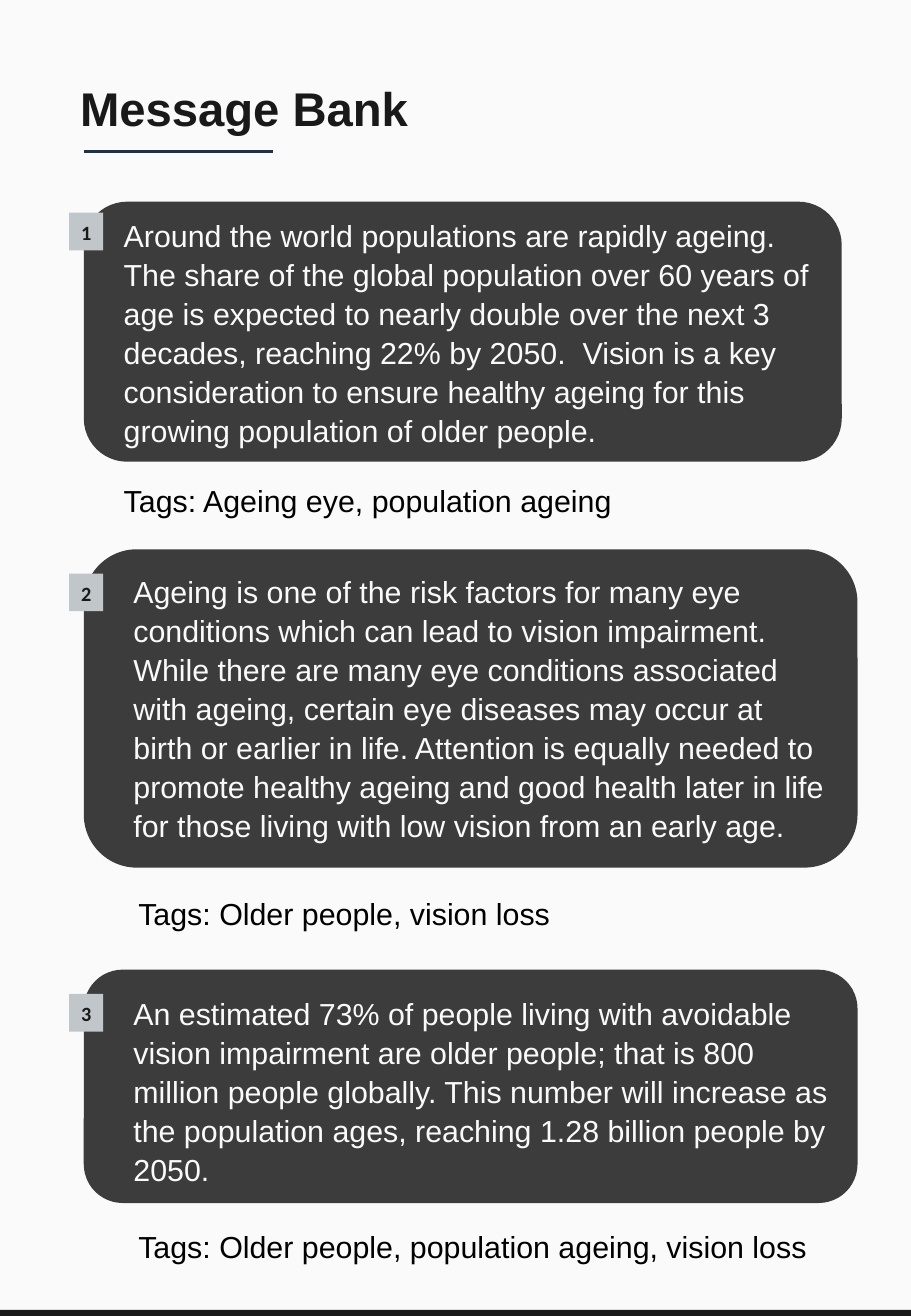
from lxml import etree
from pptx import Presentation
from pptx.dml.color import RGBColor
from pptx.enum.shapes import MSO_CONNECTOR, MSO_SHAPE
from pptx.enum.text import MSO_ANCHOR, MSO_AUTO_SIZE, PP_ALIGN
from pptx.oxml.ns import qn
from pptx.util import Pt

PX = 9144  # 100 px to the inch
PAGE_WIDTH, PAGE_HEIGHT = 750, 1083
CARD_LEFT = 69
BADGE_LEFT, BADGE_WIDTH, BADGE_HEIGHT = 57, 28, 31
TAG_WIDTH, TAG_HEIGHT = 602, 40
RECTANGLE, ROUNDED = MSO_SHAPE.RECTANGLE, MSO_SHAPE.ROUNDED_RECTANGLE
TOP, MIDDLE = MSO_ANCHOR.TOP, MSO_ANCHOR.MIDDLE
LEFT, CENTER = PP_ALIGN.LEFT, PP_ALIGN.CENTER

COLORS = {
    "paper": "FAFAFA",
    "ink": "191919",
    "rule": "1F3248",
    "card": "3C3C3C",
    "badge": "C0C6C9",
    "tag": "000000",
}

# Geometry: card (top, width, height), message (left, top, width, height),
# badge top, tag (left, top)
MESSAGES = [
    {
        "card": (166, 624, 214), "box": (92, 172, 590, 202),
        "badge": 175, "tag": (92, 390),
        "text": "Around the world populations are rapidly ageing. The share of "
                "the global population over 60 years of age is expected to "
                "nearly double over the next 3 decades, reaching 22% by 2050.  "
                "Vision is a key consideration to ensure healthy ageing for "
                "this growing population of older people.",
        "tags": "Tags: Ageing eye, population ageing",
    },
    {
        "card": (452, 637, 262), "box": (100, 465, 593, 235),
        "badge": 472, "tag": (104, 730),
        "text": "Ageing is one of the risk factors for many eye conditions "
                "which can lead to vision impairment. While there are many eye "
                "conditions associated with ageing, certain eye diseases may "
                "occur at birth or earlier in life. Attention is equally needed "
                "to promote healthy ageing and good health later in life for "
                "those living with low vision from an early age.",
        "tags": "Tags: Older people, vision loss",
    },
    {
        "card": (798, 637, 192), "box": (100, 812, 593, 170),
        "badge": 818, "tag": (104, 1004),
        "text": "An estimated 73% of people living with avoidable vision "
                "impairment are older people; that is 800 million people "
                "globally. This number will increase as the population ages, "
                "reaching 1.28 billion people by 2050.",
        "tags": "Tags: Older people, population ageing, vision loss",
    },
]


def write(shape, text, size, color, font="Arial", bold=False,
          align=LEFT, anchor=TOP):
    frame = shape.text_frame
    frame.word_wrap = True
    frame.auto_size = MSO_AUTO_SIZE.NONE
    frame.vertical_anchor = anchor
    para = frame.paragraphs[0]
    para.text = text
    para.alignment = align
    para.line_spacing = 1.07
    para.space_before = Pt(0)
    para.space_after = Pt(6)
    para.font.name = font
    para.font.size = Pt(size)
    para.font.bold = bold
    para.font.color.rgb = RGBColor.from_string(COLORS[color])


def add_block(kind, left, top, width, height, color):
    block = page.shapes.add_shape(kind, left * PX, top * PX, width * PX, height * PX)
    block.shadow.inherit = False
    block.fill.solid()
    block.fill.fore_color.rgb = RGBColor.from_string(COLORS[color])
    block.line.fill.background()
    return block


# Page
deck = Presentation()
deck.slide_width, deck.slide_height = PAGE_WIDTH * PX, PAGE_HEIGHT * PX
page = deck.slides.add_slide(deck.slide_layouts[5])
page.background.fill.solid()
page.background.fill.fore_color.rgb = RGBColor.from_string(COLORS["paper"])

# Title and its rule
title = page.shapes.title
title.left, title.top, title.width, title.height = 56 * PX, 57 * PX, 650 * PX, 69 * PX
write(title, "Message Bank", 28, "ink", bold=True)

rule = page.shapes.add_connector(
    MSO_CONNECTOR.STRAIGHT, CARD_LEFT * PX, 125 * PX, 225 * PX, 125 * PX)
rule.line.width = Pt(1.75)
rule.line.color.rgb = RGBColor.from_string(COLORS["rule"])
etree.SubElement(rule._element.spPr, qn("a:effectLst"))

# Numbered messages with their tags
for number, message in enumerate(MESSAGES, start=1):
    add_block(ROUNDED, CARD_LEFT, *message["card"], "card")

    box = page.shapes.add_textbox(*(length * PX for length in message["box"]))
    write(box, message["text"], 18, "paper")

    badge = add_block(
        RECTANGLE, BADGE_LEFT, message["badge"], BADGE_WIDTH, BADGE_HEIGHT, "badge")
    badge.text_frame.margin_left = badge.text_frame.margin_right = 0
    write(badge, str(number), 12, "ink", "Calibri", True, CENTER, MIDDLE)

    tag_left, tag_top = message["tag"]
    tag = page.shapes.add_textbox(
        tag_left * PX, tag_top * PX, TAG_WIDTH * PX, TAG_HEIGHT * PX)
    write(tag, message["tags"], 18, "tag")

# Bottom bar
add_block(RECTANGLE, 0, 1078, PAGE_WIDTH, PAGE_HEIGHT - 1078, "ink")

deck.save("out.pptx")
